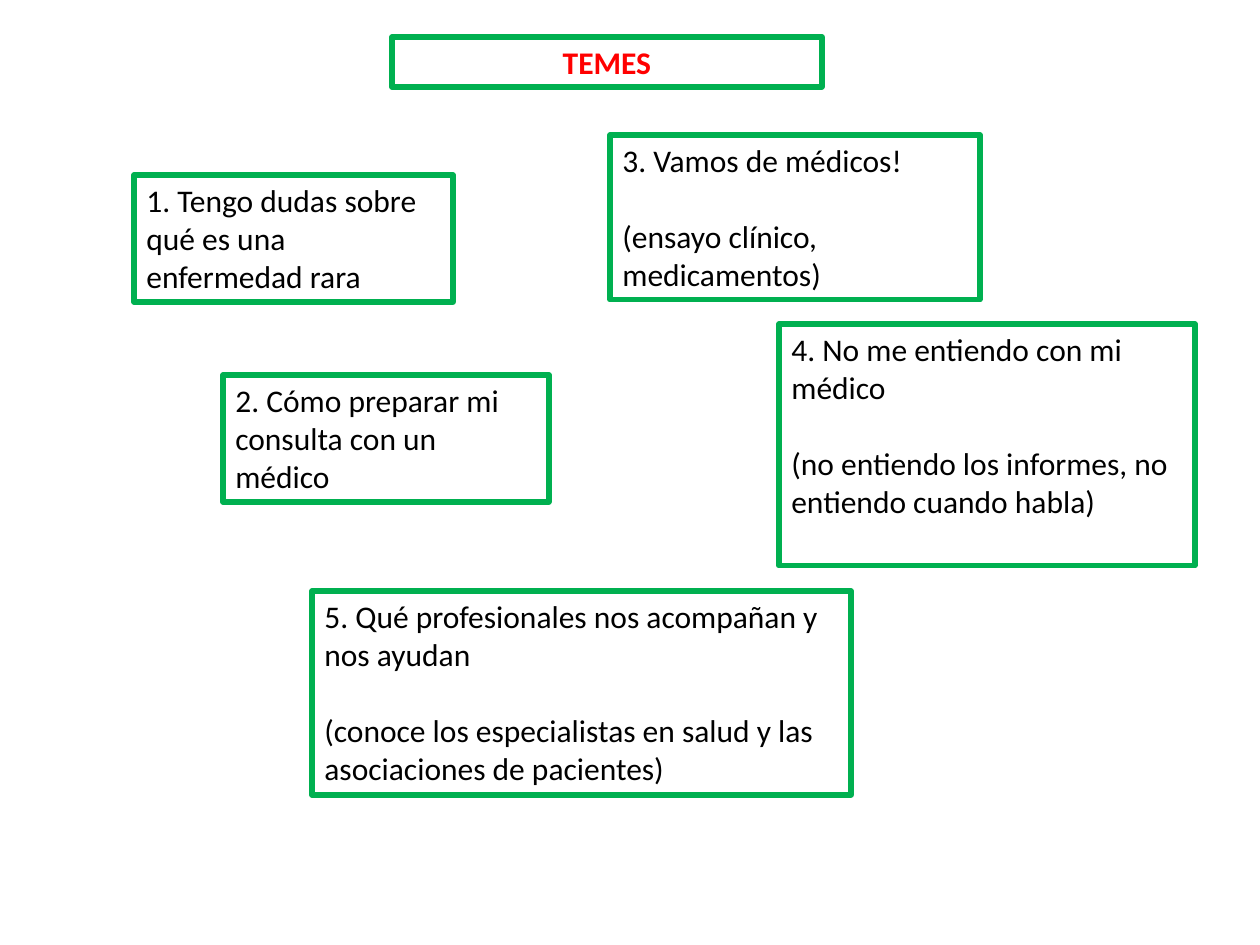
from pptx import Presentation, util as u
from pptx.dml.color import RGBColor
from pptx.enum import text

PX = u.Inches(1) / 126
COLORS = {"border": "00B050", "title": "FF0000", "body": "000000"}
FONT = "Calibri"
FONT_SIZE = 18
BORDER_WIDTH = 3
NOTE_GAP = 22

TITLE = ("TEMES", (392, 37, 430, 50))
TOPICS = [
    (["1. Tengo dudas sobre qué es una enfermedad rara"], (134, 175, 319, 127)),
    (["2. Cómo preparar mi consulta con un médico"], (223, 375, 326, 127)),
    (["3. Vamos de médicos!", "(ensayo clínico, medicamentos)"], (610, 135, 370, 165)),
    (["4. No me entiendo con mi médico",
      "(no entiendo los informes, no entiendo cuando habla)"], (779, 324, 416, 242)),
    (["5. Qué profesionales nos acompañan y nos ayudan",
      "(conoce los especialistas en salud y las asociaciones de pacientes)"],
     (312, 591, 539, 204)),
]


def px(length):
    return u.Emu(round(length * PX))


def add_box(slide, lines, place, color, bold=False, align=text.PP_ALIGN.LEFT):
    shape = slide.shapes.add_textbox(*map(px, place))
    shape.line.color.rgb = RGBColor.from_string(COLORS["border"])
    shape.line.width = u.Pt(BORDER_WIDTH)
    frame = shape.text_frame
    frame.word_wrap = True
    frame.text = "\n".join(lines)
    for index, paragraph in enumerate(frame.paragraphs):
        paragraph.alignment = align
        if index:
            paragraph.space_before = u.Pt(NOTE_GAP)
        for run in paragraph.runs:
            run.font.name = FONT
            run.font.size = u.Pt(FONT_SIZE)
            run.font.bold = bold
            run.font.color.rgb = RGBColor.from_string(COLORS[color])


def main():
    presentation = Presentation()
    presentation.slide_width = px(1260)
    presentation.slide_height = px(945)
    slide = presentation.slides.add_slide(presentation.slide_layouts[6])
    title, place = TITLE
    add_box(slide, [title], place, "title", bold=True, align=text.PP_ALIGN.CENTER)
    for lines, place in TOPICS:
        add_box(slide, lines, place, "body")
    presentation.save("out.pptx")


if __name__ == "__main__":
    main()
